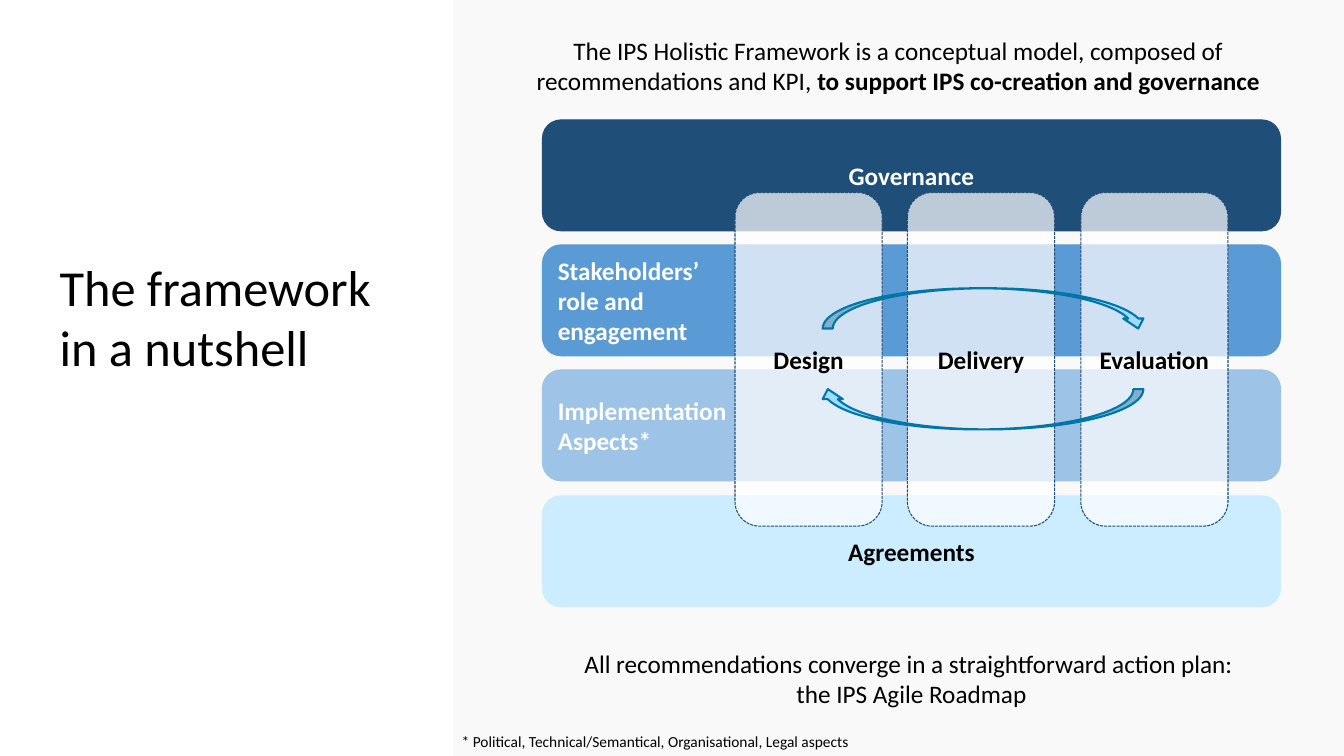
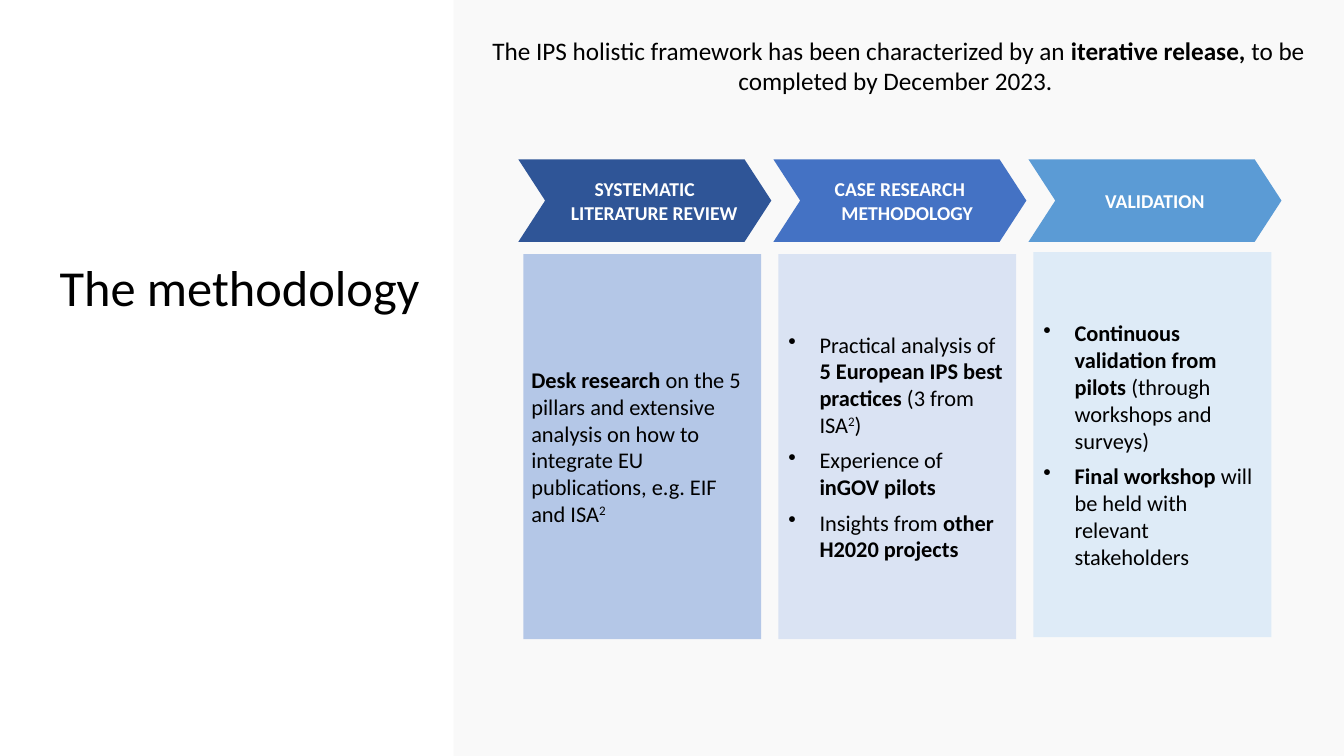
"""Build two slides on a holistic framework and its methodology."""
from lxml.etree import SubElement
from pptx import Presentation
from pptx.dml.color import RGBColor
from pptx.enum.dml import MSO_LINE
from pptx.enum.shapes import MSO_SHAPE
from pptx.enum.text import MSO_ANCHOR, MSO_AUTO_SIZE, PP_ALIGN
from pptx.oxml.ns import qn
from pptx.util import Emu, Pt

SCALE = 9144
WIDTH, HEIGHT = 1333, 750
FONT = "Calibri"
COLORS = {
    "black": "000000", "white": "FFFFFF", "panel": "F9F9F9",
    "navy": "1F4E79", "blue": "5B9BD5", "sky": "9DC3E6", "ice": "CCECFF",
    "arrow": "A0DCFF", "edge": "0076A8",
    "royal": "2F5597", "cobalt": "4472C4",
    "mist": "B4C7E7", "haze": "DAE3F3", "pale": "DEEBF7",
}
CENTER, LEFT = PP_ALIGN.CENTER, PP_ALIGN.LEFT
MIDDLE, TOP = MSO_ANCHOR.MIDDLE, MSO_ANCHOR.TOP

FRAME = {
    "title": "The framework in a nutshell",
    "width": 353,
    "intro": [[("The IPS Holistic Framework is a conceptual model, composed of "
                "recommendations and KPI, ", ""),
               ("to support IPS co-creation and governance", "b")]],
}
BANDS = [
    (["Governance"], "navy", "white", CENTER),
    (["Stakeholders’", "role and", "engagement"], "blue", "white", LEFT),
    (["Implementation", "Aspects*"], "sky", "white", LEFT),
    (["Agreements"], "ice", "black", CENTER),
]
PILLARS = ["Design", "Delivery", "Evaluation"]
ARROWS = [(816, 286, 0), (811, 386, 180)]
PLAN = ["All recommendations converge in a straightforward action plan: ",
        "the IPS Agile Roadmap"]
NOTE = ["* Political, Technical/Semantical, Organisational, Legal aspects"]

METHOD = {
    "title": "The methodology",
    "width": 424,
    "intro": [[("The IPS holistic framework has been characterized by an ", ""),
               ("iterative release, ", "b"),
               ("to be completed by December 2023. ", "")]],
}
STEPS = [
    ("SYSTEMATIC LITERATURE REVIEW", "royal", "mist", 252, 8, False, [
        [("Desk research ", "b"),
         ("on the 5 pillars and extensive analysis on how to integrate EU "
          "publications, e.g. EIF and ISA", ""), ("2", "sup")]]),
    ("CASE RESEARCH METHODOLOGY ", "cobalt", "haze", 252, 10, True, [
        [("Practical analysis of ", ""), ("5 European IPS best practices", "b"),
         (" (3 from ISA", ""), ("2", "sup"), (")", "")],
        [("Experience of ", ""), ("inGOV pilots", "b")],
        [("Insights from ", ""), ("other H2020 projects", "b")]]),
    ("VALIDATION", "blue", "pale", 250, 10, True, [
        [("Continuous validation from pilots ", "b"),
         ("(through workshops and surveys)", "")],
        [("Final workshop", "b"),
         (" will be held with relevant stakeholders", "")]]),
]


def px(value):
    return Emu(value * SCALE)


def rgb(name):
    return RGBColor.from_string(COLORS[name])


def write(shape, paras, size=18, color="black", align=LEFT, anchor=TOP,
          bold=False, inset=(10, 5, 10, 5), before=0, hang=0, bullet=False):
    frame = shape.text_frame
    frame.word_wrap = True
    frame.auto_size = MSO_AUTO_SIZE.NONE
    frame.vertical_anchor = anchor
    (frame.margin_left, frame.margin_top,
     frame.margin_right, frame.margin_bottom) = map(px, inset)
    for i, runs in enumerate(paras):
        para = frame.add_paragraph() if i else frame.paragraphs[0]
        para.alignment = align
        if i and before:
            para.space_before = Pt(before)
        props = para._p.get_or_add_pPr()
        if hang:
            props.set("marL", str(px(hang)))
            props.set("indent", str(px(-hang)))
        if bullet:
            SubElement(props, qn("a:buChar")).set("char", "•")
        for text, style in [(runs, "")] if isinstance(runs, str) else runs:
            run = para.add_run()
            run.text = text
            font = run.font
            font.name, font.size = FONT, Pt(size)
            font.bold = bold or style == "b"
            font.color.rgb = rgb(color)
            if style == "sup":
                run._r.get_or_add_rPr().set("baseline", "30000")


def draw(parent, kind, box, fill, line=None, weight=0.75, adj=None):
    shape = parent.shapes.add_shape(kind, *map(px, box))
    shape.shadow.inherit = False
    shape.fill.solid()
    shape.fill.fore_color.rgb = rgb(fill)
    if line:
        shape.line.color.rgb = rgb(line)
        shape.line.width = Pt(weight)
    else:
        shape.line.fill.background()
    if adj:
        shape.adjustments[0] = adj
    return shape


def label(slide, box, paras, **style):
    write(slide.shapes.add_textbox(*map(px, box)), paras, **style)


def start(deck, data):
    slide = deck.slides.add_slide(deck.slide_layouts[5])
    panel = draw(slide, MSO_SHAPE.RECTANGLE, (450, 0, WIDTH - 450, HEIGHT), "panel")
    slide.shapes._spTree.insert(2, panel._element)
    title = slide.shapes.title
    title.left, title.top, title.width, title.height = map(
        px, (49, 249, data["width"], 131))
    write(title, [data["title"]], size=36)
    label(slide, (474, 30, 834, 88), data["intro"], align=CENTER)
    return slide


def frame_slide(deck):
    slide = start(deck, FRAME)
    group = slide.shapes.add_group_shape()
    for i, (lines, fill, color, align) in enumerate(BANDS):
        band = draw(group, MSO_SHAPE.ROUNDED_RECTANGLE,
                    (538, 119 + 373 * i // 3, 732, 110), fill, line=fill)
        write(band, lines, color=color, align=align, anchor=MIDDLE, bold=True)
    for i, name in enumerate(PILLARS):
        pillar = draw(group, MSO_SHAPE.ROUNDED_RECTANGLE,
                      (729 + 343 * i // 2, 191, 146, 331), "white", line="navy")
        pillar.line.dash_style = MSO_LINE.SQUARE_DOT
        tint = pillar.fill._xPr.find(qn("a:solidFill"))[0]
        SubElement(tint, qn("a:alpha")).set("val", "71000")
        write(pillar, [name], align=CENTER, anchor=MIDDLE, bold=True,
              inset=(4, 5, 4, 5))
    for left, top, turn in ARROWS:
        arrow = draw(group, MSO_SHAPE.CURVED_DOWN_ARROW, (left, top, 323, 40),
                     "arrow", line="edge", weight=1.5)
        arrow.rotation = turn
    label(slide, (500, 638, 808, 71), PLAN, align=CENTER)
    label(slide, (448, 721, 621, 29), NOTE, size=11)


def method_slide(deck):
    slide = start(deck, METHOD)
    for i, (name, dark, light, top, pad, bullet, paras) in enumerate(STEPS):
        left = 514 + 253 * i
        head = draw(slide, MSO_SHAPE.CHEVRON, (left, 158, 251, 82), dark, adj=0.325)
        write(head, [name], size=14, color="white", align=CENTER, anchor=MIDDLE,
              bold=True, inset=(0, 0, 0, 0), hang=19)
        body = draw(slide, MSO_SHAPE.RECTANGLE, (left + 5, top, 236, 382), light)
        write(body, paras, size=16, anchor=MIDDLE, inset=(pad, 10, 10, 10),
              before=6, hang=31 if bullet else 0, bullet=bullet)


def main():
    deck = Presentation()
    deck.slide_width, deck.slide_height = px(WIDTH), px(HEIGHT)
    frame_slide(deck)
    method_slide(deck)
    deck.save("out.pptx")


if __name__ == "__main__":
    main()
